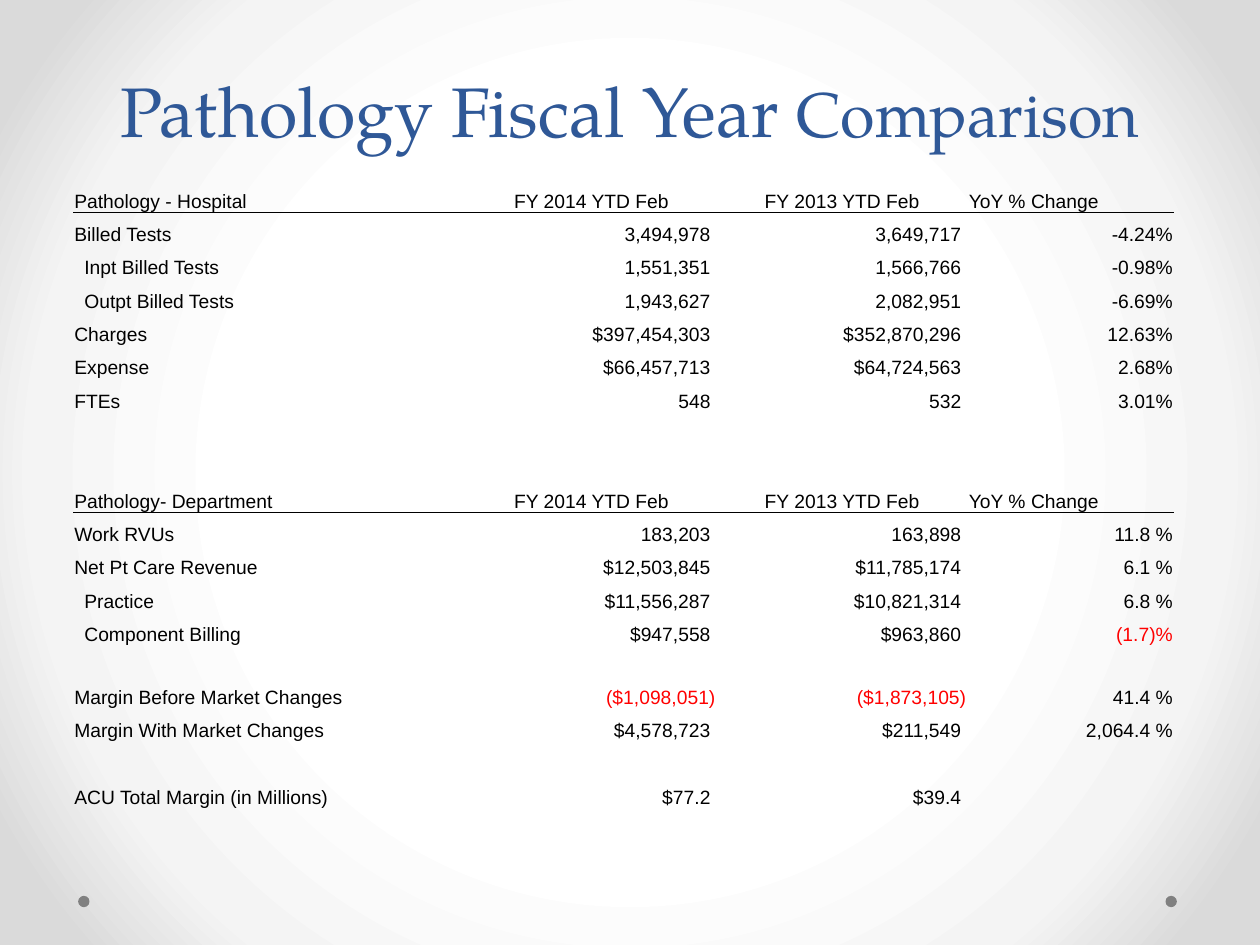
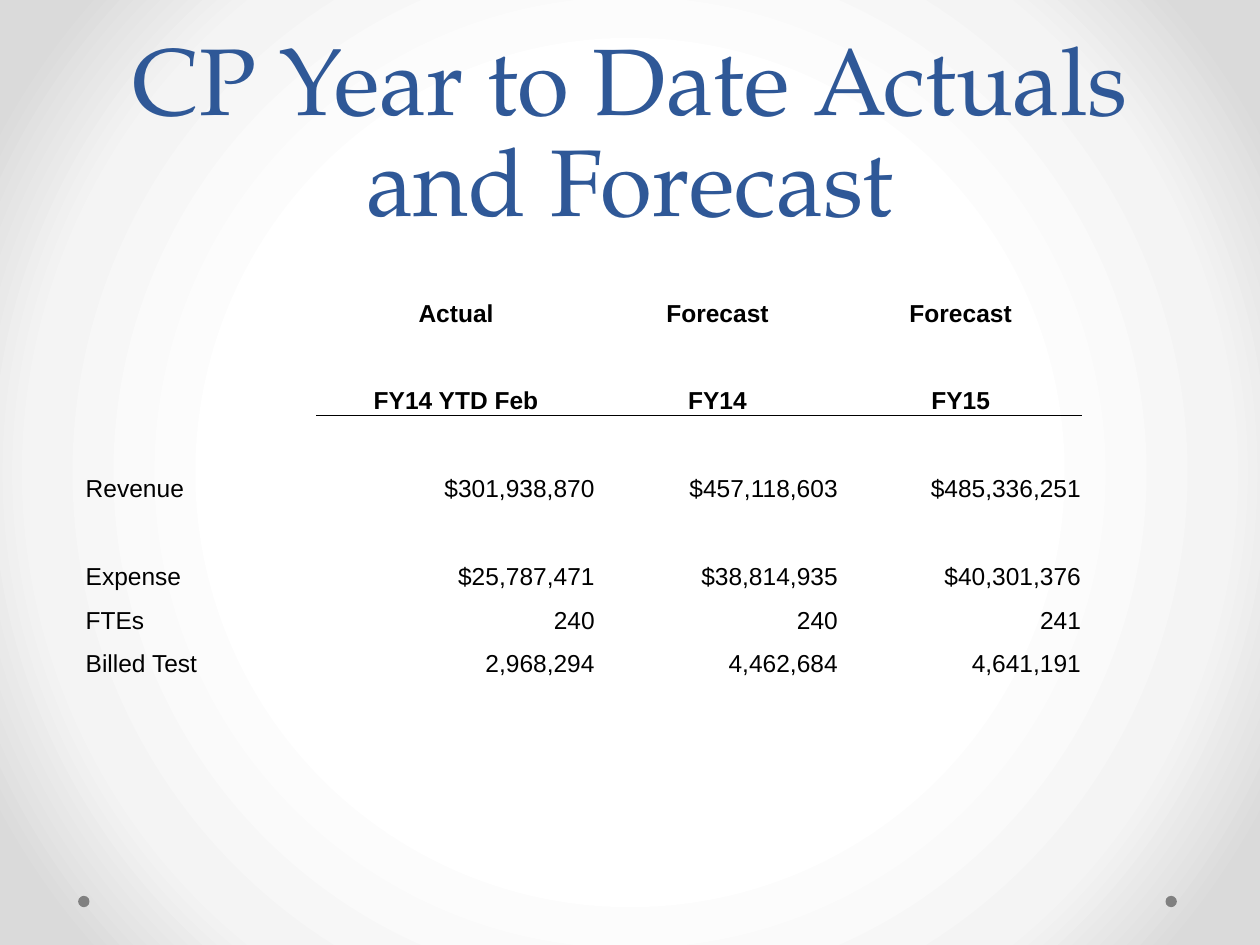
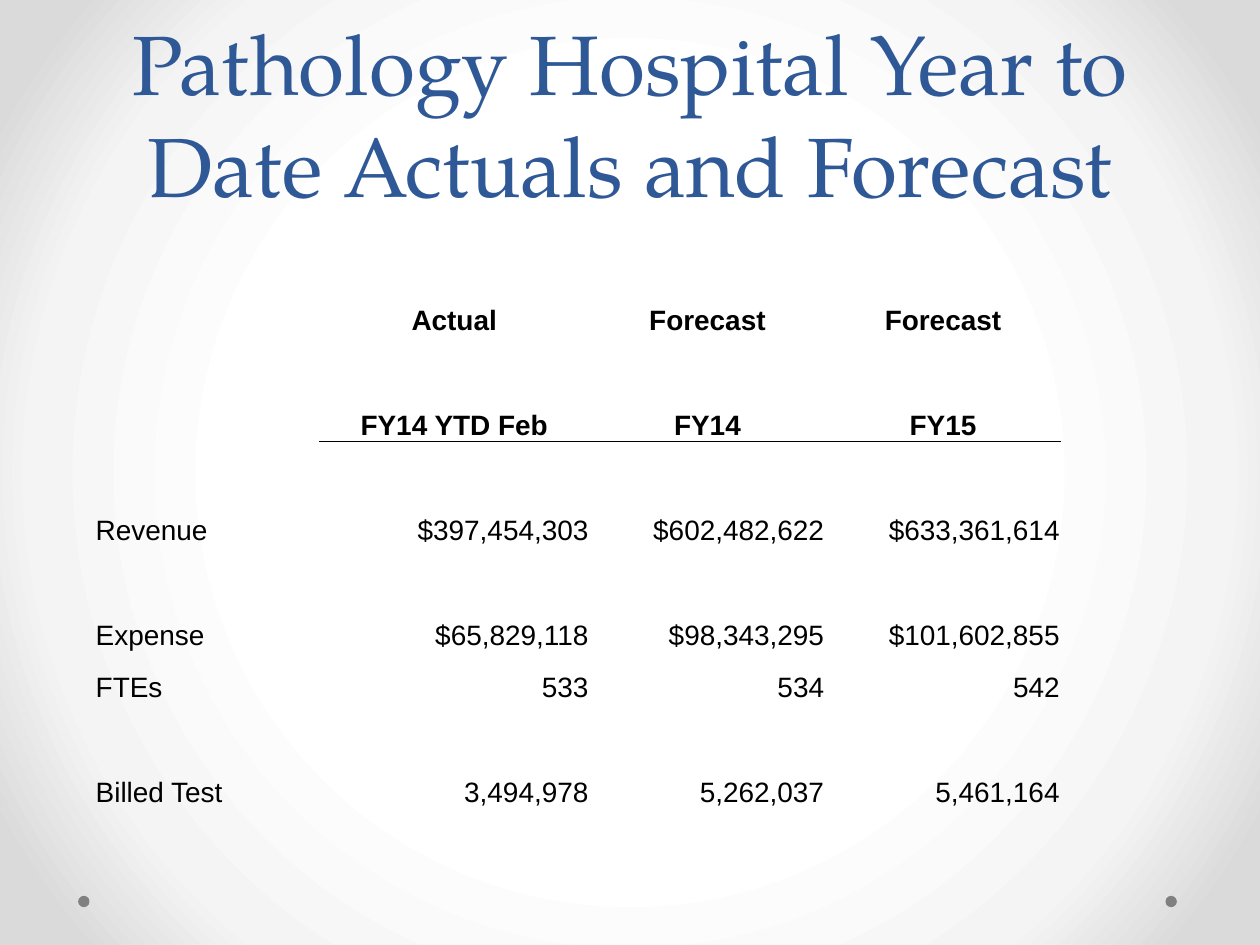
from lxml import etree
from pptx import Presentation
from pptx.dml.color import RGBColor
from pptx.enum.shapes import MSO_SHAPE
from pptx.enum.text import MSO_ANCHOR, MSO_AUTO_SIZE, PP_ALIGN
from pptx.oxml import parse_xml
from pptx.oxml.ns import nsdecls, qn
from pptx.util import Inches, Pt

LEFT, CENTER, RIGHT = PP_ALIGN.LEFT, PP_ALIGN.CENTER, PP_ALIGN.RIGHT
BOTTOM = MSO_ANCHOR.BOTTOM
OVAL = MSO_SHAPE.OVAL
NO_AUTOFIT = MSO_AUTO_SIZE.NONE

TITLE_BLUE = RGBColor(0x2F, 0x58, 0x97)
DOT_GRAY = RGBColor(0x80, 0x80, 0x80)
BLACK = RGBColor(0, 0, 0)
RED = RGBColor(0xFF, 0, 0)
BACKGROUND_STOPS = [(50, RGBColor(0xFF, 0xFF, 0xFF)),
                    (76, RGBColor(0xF4, 0xF4, 0xF4)),
                    (92, RGBColor(0xDA, 0xDA, 0xDA))]

TITLE_FONT, TABLE_FONT = "TeX Gyre Pagella", "Arial"
PLAIN_TABLE_STYLE = "{2D5ABB26-0587-4C30-8999-92F81FD0307C}"
CELL_MARGIN = 0.01
SPACE_WIDTH = 0.04  # one space of table text, for indents and closing brackets
DOT_LEFTS, DOT_TOP, DOT_SIZE = (0.62, 9.25), 7.11, 0.09

BLANK = ("", "", "", "")
FORECAST_HEADS = [("", "Actual", "Forecast", "Forecast"),
                  ("", "FY14 YTD Feb", "FY14", "FY15")]

# Each row weight is a multiple of the normal row height in that table.
PAGES = [
    {
        "title": [("Pathology Fiscal Year ", 40), ("Comparison", 36)],
        "title_top": -0.5,
        "at": (0.58, 1.42, 8.75, 5),
        "columns": (3.12, 1.99, 1.99, 1.64),
        "row_weights": [1] * 14 + [1.89] + [1] * 3,
        "size": 11,
        "bold_heads": False,
        "head_aligns": (LEFT, CENTER, CENTER, LEFT),
        "head_rows": (0, 9),
        "ruled_rows": (0, 9),
        "sub_rows": (2, 3, 12, 13),
        "bracket_columns": (1, 2),
        "rows": [
            ("Pathology - Hospital", "FY 2014 YTD Feb", "FY 2013 YTD Feb", "YoY % Change"),
            ("Billed Tests", "3,494,978", "3,649,717", "-4.24%"),
            ("Inpt Billed Tests", "1,551,351", "1,566,766", "-0.98%"),
            ("Outpt Billed Tests", "1,943,627", "2,082,951", "-6.69%"),
            ("Charges", "$397,454,303", "$352,870,296", "12.63%"),
            ("Expense", "$66,457,713", "$64,724,563", "2.68%"),
            ("FTEs", "548", "532", "3.01%"),
            BLANK,
            BLANK,
            ("Pathology- Department", "FY 2014 YTD Feb", "FY 2013 YTD Feb", "YoY % Change"),
            ("Work RVUs", "183,203", "163,898", "11.8 %"),
            ("Net Pt Care Revenue", "$12,503,845", "$11,785,174", "6.1 %"),
            ("Practice", "$11,556,287", "$10,821,314", "6.8 %"),
            ("Component Billing", "$947,558", "$963,860", "(1.7)%"),
            ("Margin Before Market Changes", "($1,098,051)", "($1,873,105)", "41.4 %"),
            ("Margin With Market Changes", "$4,578,723", "$211,549", "2,064.4 %"),
            BLANK,
            ("ACU Total Margin (in Millions)", "$77.2", "$39.4", ""),
        ],
    },
    {
        "title": [("CP Year to Date Actuals and Forecast", 54)],
        "title_top": 0.17,
        "at": (0.67, 2.25, 7.92, 3.83),
        "columns": (1.84, 2.22, 1.93, 1.93),
        "row_weights": [1, 2, 2, 2, 1, 1, 1, 1],
        "size": 14,
        "rows": FORECAST_HEADS + [
            ("Revenue", "$301,938,870", "$457,118,603", "$485,336,251"),
            ("Expense", "$25,787,471", "$38,814,935", "$40,301,376"),
            ("FTEs", "240", "240", "241"),
            ("Billed Test", "2,968,294", "4,462,684", "4,641,191"),
            BLANK,
            BLANK,
        ],
    },
    {
        "title": [("Pathology Hospital Year to Date Actuals and Forecast", 48)],
        "title_top": 0,
        "at": (0.75, 2.25, 7.67, 4.17),
        "columns": (1.78, 2.15, 1.87, 1.87),
        "row_weights": [1, 2, 2, 2, 1, 2],
        "size": 16,
        "rows": FORECAST_HEADS + [
            ("Revenue", "$397,454,303", "$602,482,622", "$633,361,614"),
            ("Expense", "$65,829,118", "$98,343,295", "$101,602,855"),
            ("FTEs", "533", "534", "542"),
            ("Billed Test", "3,494,978", "5,262,037", "5,461,164"),
        ],
    },
]

FORECAST_STYLE = {
    "bold_heads": True,
    "head_aligns": (LEFT, CENTER, CENTER, CENTER),
    "head_rows": (0, 1),
    "ruled_rows": (1,),
    "sub_rows": (),
    "bracket_columns": (),
}


def set_master_background(master):
    stops = "".join(f'<a:gs pos="{percent * 1000}"><a:srgbClr val="{color}"/></a:gs>'
                    for percent, color in BACKGROUND_STOPS)
    background = parse_xml(
        f'<p:bg {nsdecls("p", "a")}><p:bgPr><a:gradFill rotWithShape="1">'
        f'<a:gsLst>{stops}</a:gsLst><a:path path="circle">'
        '<a:fillToRect l="50000" t="50000" r="50000" b="50000"/></a:path>'
        '</a:gradFill><a:effectLst/></p:bgPr></p:bg>')
    common = master._element.cSld
    for old in common.findall(qn("p:bg")):
        common.remove(old)
    common.insert(0, background)


def add_master_dots(master, page):
    """Make the corner dots on a page, then move them to the master."""
    for number, left in enumerate(DOT_LEFTS):
        dot = page.shapes.add_shape(OVAL, Inches(left), Inches(DOT_TOP),
                                    Inches(DOT_SIZE), Inches(DOT_SIZE))
        dot.shadow.inherit = False
        dot.fill.solid()
        dot.fill.fore_color.rgb = DOT_GRAY
        dot.line.fill.background()
        dot._element.nvSpPr.cNvPr.set("id", str(100 + number))
        master.shapes._spTree.append(dot._element)


def fill_title(page, spans, top):
    title = page.shapes.title
    title.left, title.top = Inches(0.5), Inches(top)
    title.width, title.height = Inches(9), Inches(1.75)
    frame = title.text_frame
    frame.auto_size = NO_AUTOFIT
    frame.vertical_anchor = BOTTOM
    para = frame.paragraphs[0]
    para.alignment = CENTER
    para.line_spacing = Pt(58)
    para.font.name = TITLE_FONT
    para.font.color.rgb = TITLE_BLUE
    for text, size in spans:
        span = para.add_run()
        span.text = text
        span.font.size = Pt(size)


def underline_cell(cell):
    properties = cell._tc.get_or_add_tcPr()
    line = etree.Element(qn("a:lnB"), w=str(Pt(0.5)))
    fill = etree.SubElement(line, qn("a:solidFill"))
    etree.SubElement(fill, qn("a:srgbClr"), val=str(BLACK))
    properties.insert(0, line)


def fill_cell(cell, text, size, bold, align, left_spaces, right_spaces):
    cell.text = text
    cell.fill.background()
    cell.vertical_anchor = BOTTOM
    cell.margin_left = Inches(CELL_MARGIN + left_spaces * SPACE_WIDTH)
    cell.margin_right = Inches(CELL_MARGIN + right_spaces * SPACE_WIDTH)
    cell.margin_top, cell.margin_bottom = Inches(CELL_MARGIN), 0
    para = cell.text_frame.paragraphs[0]
    para.alignment = align
    para.font.name = TABLE_FONT
    para.font.size = Pt(size)
    para.font.bold = bold
    para.font.color.rgb = RED if text.startswith("(") else BLACK


def add_figures(page, content):
    rows, columns, weights = content["rows"], content["columns"], content["row_weights"]
    left, top, width, height = content["at"]
    table = page.shapes.add_table(len(rows), len(columns), Inches(left), Inches(top),
                                  Inches(width), Inches(height)).table
    table.first_row = table.horz_banding = False
    table._tbl.tblPr.find(qn("a:tableStyleId")).text = PLAIN_TABLE_STYLE
    for column, column_width in zip(table.columns, columns):
        column.width = Inches(column_width)
    for row, weight in zip(table.rows, weights):
        row.height = Inches(height * weight / sum(weights))

    for r, texts in enumerate(rows):
        is_head = r in content["head_rows"]
        for c, text in enumerate(texts):
            if is_head:
                align = content["head_aligns"][c]
            else:
                align = RIGHT if c else LEFT
            is_indented = c == 0 and r in content["sub_rows"]
            keeps_bracket_gap = (c in content["bracket_columns"] and not is_head
                                 and not text.endswith(")"))
            cell = table.cell(r, c)
            fill_cell(cell, text, content["size"], is_head and content["bold_heads"],
                      align, 2 * is_indented, int(keeps_bracket_gap))
            if text and r in content["ruled_rows"]:
                underline_cell(cell)


def main():
    deck = Presentation()
    deck.slide_width, deck.slide_height = Inches(10), Inches(7.5)
    title_only = deck.slide_layouts.get_by_name("Title Only")
    set_master_background(deck.slide_master)
    for content in PAGES:
        page = deck.slides.add_slide(title_only)
        fill_title(page, content["title"], content["title_top"])
        add_figures(page, {**FORECAST_STYLE, **content})
    add_master_dots(deck.slide_master, deck.slides[0])
    deck.save("out.pptx")


if __name__ == "__main__":
    main()
